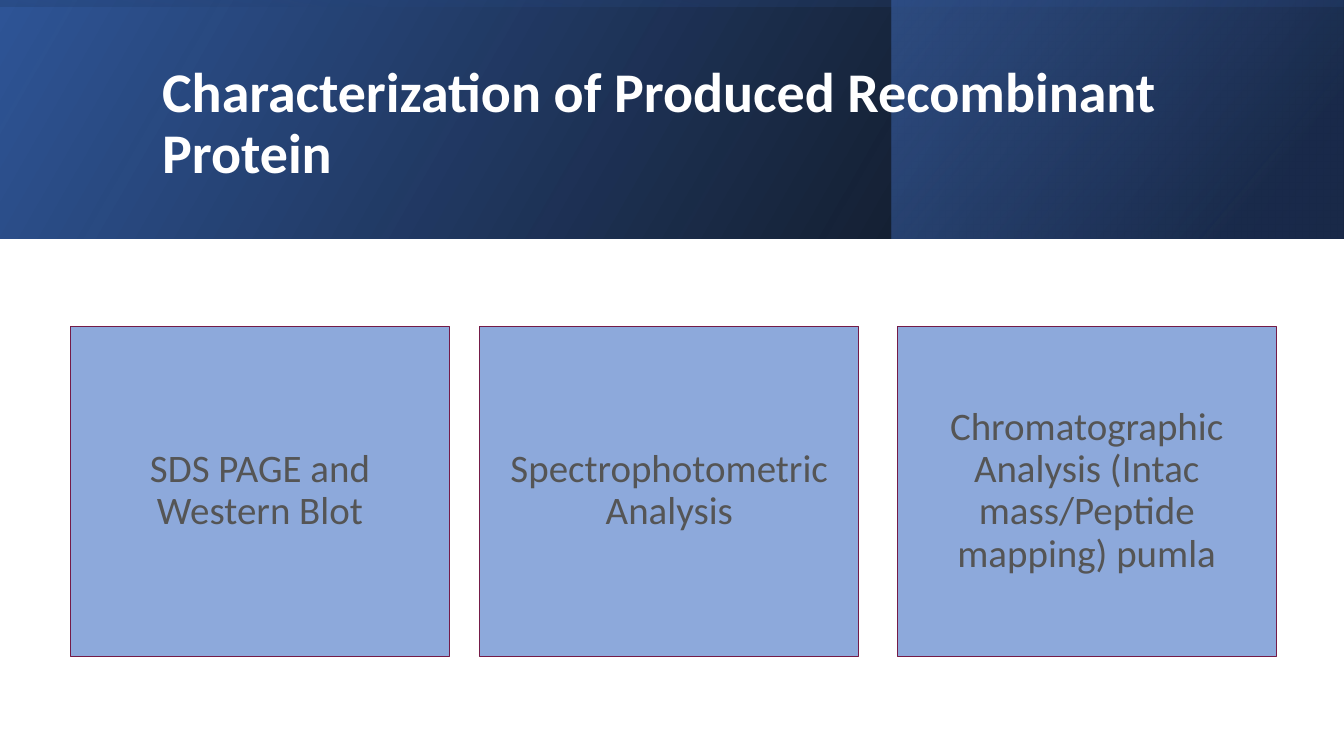
import pptx
import pptx.util
import pptx.dml.color
import pptx.enum.shapes
import pptx.enum.text
import lxml.etree

Inches = pptx.util.Inches
Pt = pptx.util.Pt

HEADING = "Characterization of Produced Recombinant Protein"
METHODS = [
    (0.7, "SDS PAGE and Western Blot"),
    (4.76, "Spectrophotometric Analysis"),
    (8.9, "Chromatographic Analysis (Intac mass/Peptide mapping) pumla"),
]
METHOD_TOP, METHOD_WIDTH, METHOD_HEIGHT = 3.24, 3.76, 3.27
BANNER_LAYERS = [
    ((0, 0, 13.33, 2.37), 0, 330, [(0, "000000", 96), (100, "2F5597", 100)]),
    ((8.84, 0, 4.48, 2.37), 0, 320, [(19, "203864", 68), (100, "4472C4", 48)]),
    ((5.48, -5.48, 2.37, 13.33), 270, 350, [(23, "2F5597", 16), (99, "000000", 45)]),
]


def color(hex_value):
    return pptx.dml.color.RGBColor.from_string(hex_value)


def add_rectangle(slide, bounds):
    rectangle = slide.shapes.add_shape(
        pptx.enum.shapes.MSO_SHAPE.RECTANGLE, *map(Inches, bounds))
    rectangle.shadow.inherit = False
    return rectangle


def add_banner_layer(slide, bounds, rotation, angle, stops):
    layer = add_rectangle(slide, bounds)
    layer.rotation = rotation
    layer._element.spPr.xfrm.set("flipH", "1")
    layer.line.fill.background()
    layer.fill.gradient()
    layer.fill.gradient_angle = 360 - angle
    for stop, (position, hex_value, _) in zip(layer.fill.gradient_stops, stops):
        stop.position = position / 100
        stop.color.rgb = color(hex_value)
    tints = layer._element.spPr.xpath("./a:gradFill//a:srgbClr")
    for tint, (_, _, opacity) in zip(tints, stops):
        alpha = lxml.etree.SubElement(tint, pptx.oxml.ns.qn("a:alpha"))
        alpha.set("val", str(opacity * 1000))


def write_text(shape, text, size, hex_value, bold, alignment):
    frame = shape.text_frame
    frame.text = text
    frame.word_wrap = True
    frame.vertical_anchor = pptx.enum.text.MSO_ANCHOR.MIDDLE
    paragraph = frame.paragraphs[0]
    paragraph.line_spacing = 0.9
    paragraph.alignment = alignment
    font = paragraph.runs[0].font
    font.name = "Calibri"
    font.size = Pt(size)
    font.bold = bold
    font.color.rgb = color(hex_value)


def add_method(slide, left, text):
    method = add_rectangle(slide, (left, METHOD_TOP, METHOD_WIDTH, METHOD_HEIGHT))
    method.fill.solid()
    method.fill.fore_color.rgb = color("8DA9DB")
    method.line.color.rgb = color("741B47")
    method.line.width = Pt(0.75)
    write_text(method, text, 27.8, "555555", False, pptx.enum.text.PP_ALIGN.CENTER)
    frame = method.text_frame
    frame.margin_left = frame.margin_right = Inches(0.12)
    frame.margin_top = frame.margin_bottom = Inches(0.12)
    frame.paragraphs[0].space_after = Pt(6)


def main():
    deck = pptx.Presentation()
    deck.slide_width, deck.slide_height = Inches(13.33), Inches(7.5)
    slide = deck.slides.add_slide(deck.slide_layouts[6])
    for layer in BANNER_LAYERS:
        add_banner_layer(slide, *layer)
    heading = slide.shapes.add_textbox(*map(Inches, (1.51, 0.38, 10.63, 1.72)))
    write_text(heading, HEADING, 40, "FFFFFF", True, pptx.enum.text.PP_ALIGN.LEFT)
    for left, text in METHODS:
        add_method(slide, left, text)
    deck.save("out.pptx")


if __name__ == "__main__":
    main()
